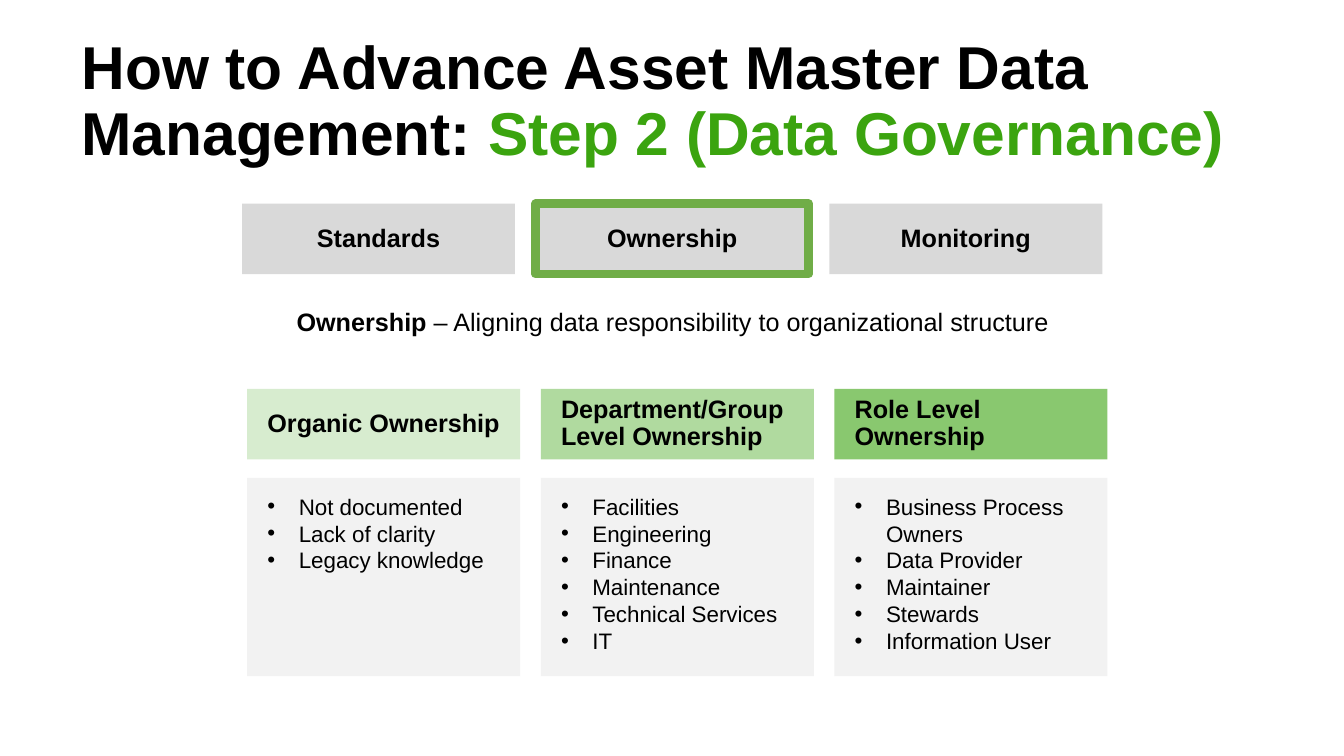
from dataclasses import dataclass

from lxml import etree
from pptx import Presentation
from pptx import util as u
from pptx.dml.color import RGBColor
from pptx.enum import shapes, text
from pptx.oxml.ns import qn

TITLE = [("How to Advance Asset Master Data Management: ", "ink"),
         ("Step 2 (Data Governance)", "green")]
DEFINITION = [("Ownership", True),
              (" – Aligning data responsibility to organizational structure", False)]
TOPICS = ["Standards", "Ownership", "Monitoring"]
CURRENT_TOPIC = "Ownership"
LEVELS = [
    ("Organic Ownership", 20,
     ["Not documented", "Lack of clarity", "Legacy knowledge"]),
    ("Department/Group Level Ownership", 40,
     ["Facilities", "Engineering", "Finance", "Maintenance",
      "Technical Services", "IT"]),
    ("Role Level Ownership", 60,
     ["Business Process Owners", "Data Provider", "Maintainer", "Stewards",
      "Information User"]),
]


@dataclass(frozen=True)
class Theme:
    font: str = "Arial"
    ink: str = "000000"
    green: str = "3BA40F"
    outline: str = "70AD47"
    topic: str = "D9D9D9"
    panel: str = "F2F2F2"
    title_size: float = 43.2
    head_size: float = 18
    list_size: float = 16


THEME = Theme()

# Lengths in centimetres
CARD_WIDTH, HEAD_HEIGHT, LIST_HEIGHT = 6.88, 1.78, 5.0
PITCH = 7.4
TOPIC_LEFT, TOPIC_TOP = 6.1, 5.13
LEVEL_LEFT, HEAD_TOP, LIST_TOP = 6.23, 9.8, 12.04
BULLET_INDENT = 0.79


def place(shape, left, top, width, height):
    shape.left, shape.top = u.Cm(left), u.Cm(top)
    shape.width, shape.height = u.Cm(width), u.Cm(height)


def set_font(font, size, color=THEME.ink, bold=False):
    font.name, font.size, font.bold = THEME.font, u.Pt(size), bold
    font.color.rgb = RGBColor.from_string(color)


def set_bullet(para, char=None, margin=0, indent=0):
    """Give the paragraph its indents and a bullet, or no bullet without char."""
    props = para._p.get_or_add_pPr()
    props.set("marL", str(u.Cm(margin)))
    props.set("indent", str(u.Cm(indent)))
    if char:
        etree.SubElement(props, qn("a:buFont"), typeface=THEME.font)
        etree.SubElement(props, qn("a:buChar"), char=char)
    else:
        etree.SubElement(props, qn("a:buNone"))


def add_card(page, left, top, height, color, insets):
    """Add a plain filled rectangle; insets are left/right, top, bottom."""
    box = page.shapes.add_shape(
        shapes.MSO_SHAPE.RECTANGLE,
        u.Cm(left), u.Cm(top), u.Cm(CARD_WIDTH), u.Cm(height))
    box.shadow.inherit = False
    box.fill.solid()
    box.fill.fore_color.rgb = RGBColor.from_string(color)
    box.line.fill.background()
    frame = box.text_frame
    frame.word_wrap = True
    side, upper, lower = map(u.Cm, insets)
    frame.margin_left = frame.margin_right = side
    frame.margin_top, frame.margin_bottom = upper, lower
    return box


def add_heading(page, words, left, top, color, align):
    box = add_card(page, left, top, HEAD_HEIGHT, color, (0.51, 0.25, 0.25))
    box.text_frame.vertical_anchor = text.MSO_ANCHOR.MIDDLE
    para = box.text_frame.paragraphs[0]
    para.text, para.alignment, para.line_spacing = words, align, 0.9
    set_font(para.font, THEME.head_size, bold=True)
    return box


def add_list(page, items, left):
    box = add_card(page, left, LIST_TOP, LIST_HEIGHT, THEME.panel, (0.51, 0.38, 0.51))
    frame = box.text_frame
    frame.vertical_anchor = text.MSO_ANCHOR.TOP
    for index, item in enumerate(items):
        para = frame.add_paragraph() if index else frame.paragraphs[0]
        para.text, para.alignment = item, text.PP_ALIGN.LEFT
        set_bullet(para, "•", BULLET_INDENT, -BULLET_INDENT)
        set_font(para.font, THEME.list_size)


def set_opacity(box, percent):
    color = box.fill._xPr.find(qn("a:solidFill"))[0]
    etree.SubElement(color, qn("a:alpha"), val=str(percent * 1000))


def fill_placeholder(shape, anchor, align):
    """Prepare a placeholder and return its first paragraph."""
    frame = shape.text_frame
    frame.word_wrap, frame.auto_size = True, text.MSO_AUTO_SIZE.NONE
    frame.vertical_anchor = anchor
    para = frame.paragraphs[0]
    para.alignment, para.line_spacing, para.space_before = align, 0.9, u.Pt(0)
    return para


def add_title(page):
    title = page.shapes.title
    place(title, 1.8, 0.69, 30.25, 3.68)
    para = fill_placeholder(title, text.MSO_ANCHOR.BOTTOM, text.PP_ALIGN.LEFT)
    for words, color in TITLE:
        span = para.add_run()
        span.text = words
        set_font(span.font, THEME.title_size, getattr(THEME, color), True)


def add_definition(page):
    body = page.placeholders[1]
    place(body, 1.8, 7.67, 30.25, 1.35)
    para = fill_placeholder(body, text.MSO_ANCHOR.TOP, text.PP_ALIGN.CENTER)
    set_bullet(para, margin=0.05)
    for words, bold in DEFINITION:
        span = para.add_run()
        span.text = words
        set_font(span.font, THEME.head_size, bold=bold)


def main():
    deck = Presentation()
    deck.slide_width, deck.slide_height = u.Cm(33.87), u.Cm(19.05)
    page = deck.slides.add_slide(deck.slide_layouts[1])
    add_title(page)
    add_definition(page)

    for column, (heading, opacity, items) in enumerate(LEVELS):
        left = LEVEL_LEFT + column * PITCH
        box = add_heading(page, heading, left, HEAD_TOP, THEME.green,
                          text.PP_ALIGN.LEFT)
        set_opacity(box, opacity)
        add_list(page, items, left)

    for column, topic in enumerate(TOPICS):
        box = add_heading(page, topic, TOPIC_LEFT + column * PITCH, TOPIC_TOP,
                          THEME.topic, text.PP_ALIGN.CENTER)
        if topic == CURRENT_TOPIC:
            box.line.color.rgb = RGBColor.from_string(THEME.outline)
            box.line.width = u.Pt(6)

    deck.save("out.pptx")


if __name__ == "__main__":
    main()
